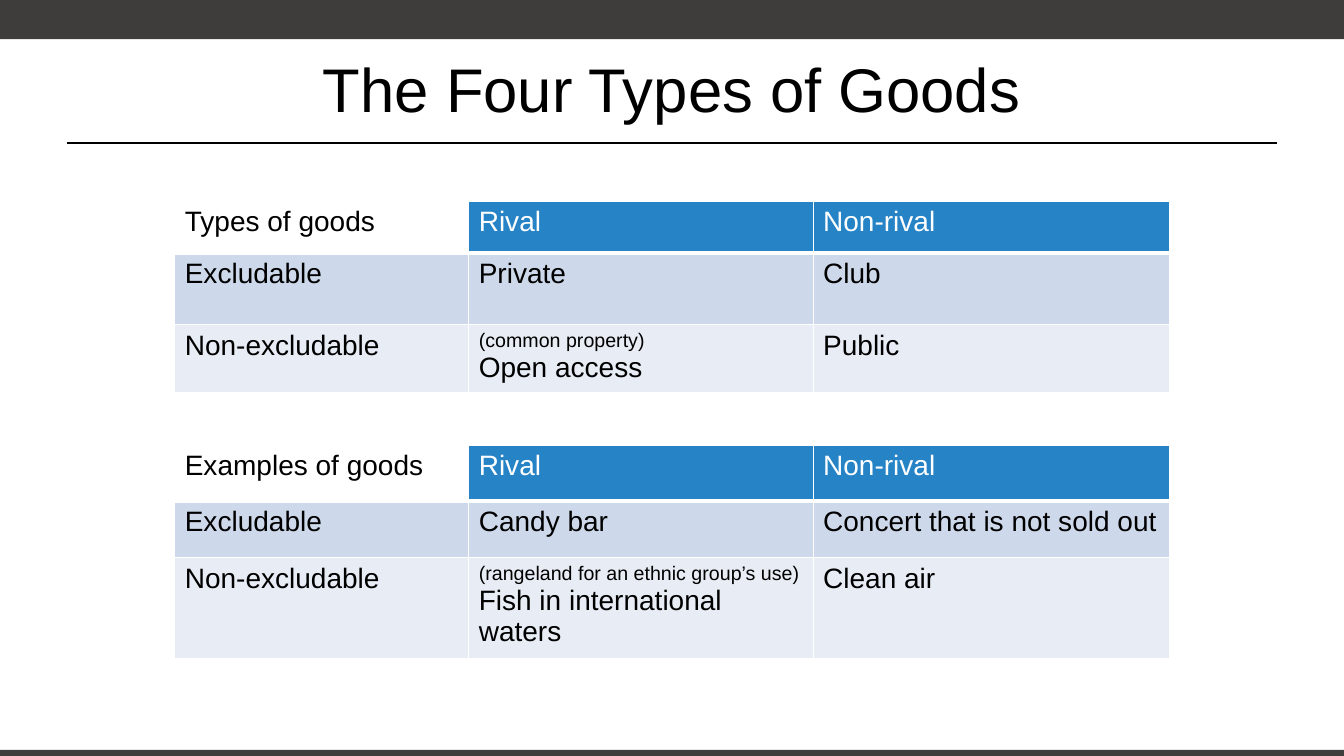
from dataclasses import dataclass

from lxml.etree import SubElement
from pptx import Presentation
from pptx.dml.color import RGBColor
from pptx.enum.shapes import MSO_CONNECTOR, MSO_SHAPE
from pptx.enum.text import MSO_ANCHOR, PP_ALIGN
from pptx.oxml.ns import qn
from pptx.util import Pt


@dataclass(frozen=True)
class Theme:
    font: str = "Arial"
    bar: str = "3E3D3C"
    text: str = "000000"
    white: str = "FFFFFF"
    header: str = "2683C6"
    bands: tuple[str, str] = ("CDD9EA", "E8EDF5")
    title_size: float = 44
    body_size: float = 20
    note_size: float = 14


@dataclass(frozen=True)
class Bar:
    top: float
    height: float


@dataclass(frozen=True)
class GoodsTable:
    top: float
    heights: tuple[float, ...]
    rows: tuple[tuple[str, ...], ...]


THEME = Theme()
WIDTH, HEIGHT = 960, 540
MARGIN = 48
TABLE_LEFT = 124.8
COLUMNS = (210, 246, 255)
BARS = (Bar(0, 28), Bar(535.6, 4.4))
TABLES = (
    GoodsTable(144, (36.7, 51.4, 45), (
        ("Types of goods", "Rival", "Non-rival"),
        ("Excludable", "Private", "Club"),
        ("Non-excludable", "(common property)\nOpen access", "Public"),
    )),
    GoodsTable(318.2, (39.5, 40.8, 67.5), (
        ("Examples of goods", "Rival", "Non-rival"),
        ("Excludable", "Candy bar", "Concert that is not sold out"),
        ("Non-excludable",
         "(rangeland for an ethnic group’s use)\nFish in international waters",
         "Clean air"),
    )),
)


def style(p, size: float, color: str) -> None:
    """Set the font of a whole paragraph."""
    p.font.name = THEME.font
    p.font.size = Pt(size)
    p.font.color.rgb = RGBColor.from_string(color)


def add_bar(s, bar: Bar) -> None:
    """Draw a dark bar across the slide."""
    sp = s.shapes.add_shape(MSO_SHAPE.RECTANGLE, Pt(0), Pt(bar.top), Pt(WIDTH), Pt(bar.height))
    sp.shadow.inherit = False
    sp.fill.solid()
    sp.fill.fore_color.rgb = RGBColor.from_string(THEME.bar)
    sp.line.fill.background()


def add_title(s, text: str) -> None:
    """Add the centred title and the rule beneath it."""
    rule = s.shapes.add_connector(
        MSO_CONNECTOR.STRAIGHT, Pt(MARGIN), Pt(102), Pt(WIDTH - MARGIN), Pt(102))
    rule.line.color.rgb = RGBColor.from_string(THEME.text)
    rule.line.width = Pt(1.25)
    SubElement(rule._element.spPr, qn("a:effectLst"))
    tf = s.shapes.add_textbox(Pt(MARGIN), Pt(18), Pt(WIDTH - 2 * MARGIN), Pt(90)).text_frame
    tf.word_wrap = True
    tf.vertical_anchor = MSO_ANCHOR.MIDDLE
    p = tf.paragraphs[0]
    p.text = text
    p.alignment = PP_ALIGN.CENTER
    style(p, THEME.title_size, THEME.text)


def add_borders(cell, bottom: float) -> None:
    """Give a cell thin white borders and a bottom one of the given width."""
    tcPr = cell._tc.get_or_add_tcPr()
    widths = {"lnL": 1, "lnR": 1, "lnT": 1, "lnB": bottom}
    for i, (tag, width) in enumerate(widths.items()):
        ln = tcPr.makeelement(qn(f"a:{tag}"), {"w": str(Pt(width))})
        fill = SubElement(ln, qn("a:solidFill"))
        SubElement(fill, qn("a:srgbClr"), val=THEME.white)
        tcPr.insert(i, ln)


def fill_cell(cell, text: str, row: int, col: int) -> None:
    """Write and colour one cell according to its place in the table."""
    is_header = row == 0 and col > 0
    cell.text = text
    for p in cell.text_frame.paragraphs:
        size = THEME.note_size if p.text.startswith("(") else THEME.body_size
        style(p, size, THEME.white if is_header else THEME.text)
    if row == 0 and col == 0:
        cell.fill.background()
    else:
        cell.fill.solid()
        color = THEME.header if is_header else THEME.bands[row - 1]
        cell.fill.fore_color.rgb = RGBColor.from_string(color)
    add_borders(cell, 3 if row == 0 else 1)


def add_goods_table(s, goods: GoodsTable) -> None:
    """Add one table of goods."""
    table = s.shapes.add_table(
        len(goods.rows), len(COLUMNS), Pt(TABLE_LEFT), Pt(goods.top),
        Pt(sum(COLUMNS)), Pt(sum(goods.heights))).table
    table.first_row = table.horz_banding = False
    for column, width in zip(table.columns, COLUMNS):
        column.width = Pt(width)
    for i, (height, texts) in enumerate(zip(goods.heights, goods.rows)):
        table.rows[i].height = Pt(height)
        for j, text in enumerate(texts):
            fill_cell(table.cell(i, j), text, i, j)


def main() -> None:
    """Build and save the slide."""
    prs = Presentation()
    prs.slide_width, prs.slide_height = Pt(WIDTH), Pt(HEIGHT)
    s = prs.slides.add_slide(prs.slide_layouts[6])
    for bar in BARS:
        add_bar(s, bar)
    add_title(s, "The Four Types of Goods")
    for goods in TABLES:
        add_goods_table(s, goods)
    prs.save("out.pptx")


if __name__ == "__main__":
    main()
